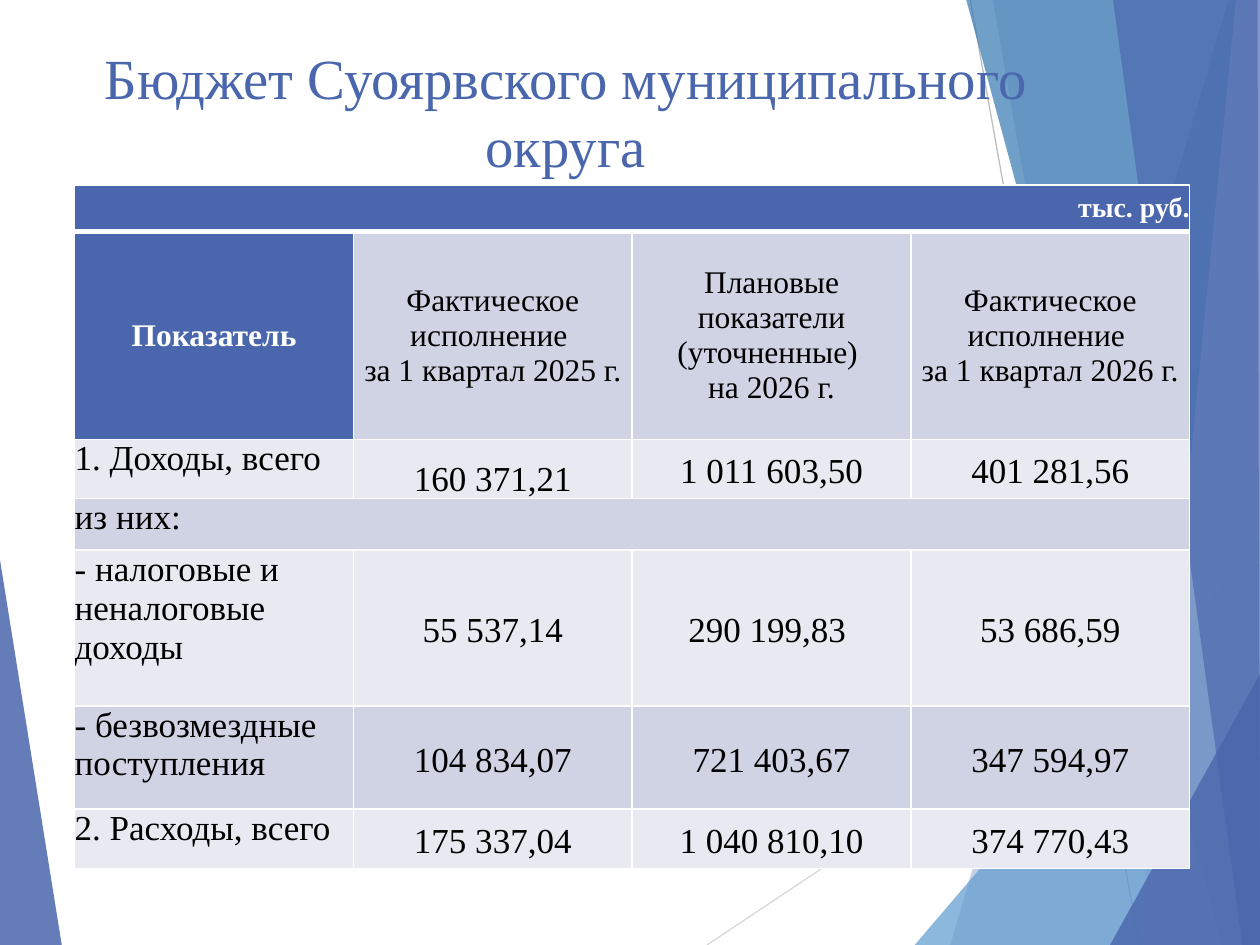
"""Build the budget slide of the Suoyarvi municipal district."""
from dataclasses import dataclass

from lxml import etree
from pptx import Presentation
from pptx.dml.color import RGBColor
from pptx.enum.shapes import MSO_CONNECTOR
from pptx.enum.text import MSO_ANCHOR, MSO_AUTO_SIZE, PP_ALIGN
from pptx.oxml.ns import qn
from pptx.util import Pt

LEFT, CENTER, RIGHT = PP_ALIGN.LEFT, PP_ALIGN.CENTER, PP_ALIGN.RIGHT
TOP, MIDDLE, BOTTOM = MSO_ANCHOR.TOP, MSO_ANCHOR.MIDDLE, MSO_ANCHOR.BOTTOM
STRAIGHT = MSO_CONNECTOR.STRAIGHT
FIXED_SIZE = MSO_AUTO_SIZE.NONE


@dataclass(frozen=True)
class Theme:
    font: str = "Times New Roman"
    accent: str = "4A66AC"
    sky: str = "629DD1"
    ocean: str = "3477B2"
    lavender: str = "90A2CF"
    band_dark: str = "D0D3E3"
    band_light: str = "E9EAF1"
    white: str = "FFFFFF"
    black: str = "000000"
    ray_light: str = "D9D9D9"
    ray_dark: str = "BFBFBF"
    title_size: float = 32.4
    unit_size: float = 16
    heading_size: float = 18
    body_size: float = 20


theme = Theme()


def write(paragraph, text, size, color, align, bold=False):
    paragraph.alignment = align
    run = paragraph.add_run()
    run.text = text
    run.font.name = theme.font
    run.font.size = Pt(size)
    run.font.bold = bold
    run.font.color.rgb = RGBColor.from_string(color)


def style_cell(cell, fill, top_width, bottom_width):
    properties = cell._tc.get_or_add_tcPr()
    for side, width in (("L", 1), ("R", 1), ("T", top_width), ("B", bottom_width)):
        border = etree.SubElement(properties, qn(f"a:ln{side}"), w=str(Pt(width)))
        solid = etree.SubElement(border, qn("a:solidFill"))
        etree.SubElement(solid, qn("a:srgbClr"), val=theme.white)
    cell.fill.solid()
    cell.fill.fore_color.rgb = RGBColor.from_string(fill)
    cell.margin_left = cell.margin_right = cell.margin_top = cell.margin_bottom = 0


presentation = Presentation()
presentation.slide_width, presentation.slide_height = Pt(720), Pt(540)
slide = presentation.slides.add_slide(presentation.slide_layouts[5])
shapes = slide.shapes

rays = [
    ((404, 540), (720.5, 329), theme.ray_light),
    ((554.5, 0), (651, 540), theme.ray_dark),
]
facets = [
    ([(0, 320), (35.3, 540), (0, 540)], theme.accent, 85),
    ([(702, 0), (543, 540), (720, 540), (720, 0)], theme.accent, 30),
    ([(567.3, 0), (661.7, 540), (720, 540), (720, 0)], theme.accent, 20),
    ([(522.7, 540), (720, 309), (720, 540)], theme.sky, 72),
    ([(552.2, 0), (698.4, 540), (720, 540), (720, 0)], theme.ocean, 70),
    ([(706.3, 0), (653, 540), (720, 540), (720, 0)], theme.lavender, 70),
    ([(636, 0), (710, 540), (720, 540), (718.6, 0)], theme.accent, 65),
    ([(634.3, 540), (720, 385.2), (720, 540)], theme.accent, 80),
]

for index, (points, color, opacity) in enumerate(facets):
    if index == 1:
        for start, end, ray_color in rays:
            ray = shapes.add_connector(STRAIGHT, *map(Pt, start + end))
            ray.line.color.rgb = RGBColor.from_string(ray_color)
            ray.line.width = Pt(0.75)
            etree.SubElement(ray.element.spPr, qn("a:effectLst"))
    corners = [(Pt(x), Pt(y)) for x, y in points]
    builder = shapes.build_freeform(*corners[0])
    builder.add_line_segments(corners[1:], close=True)
    facet = builder.convert_to_shape()
    facet.shadow.inherit = False
    facet.line.fill.background()
    facet.fill.solid()
    facet.fill.fore_color.rgb = RGBColor.from_string(color)
    tint = facet.element.spPr.find(f"{qn('a:solidFill')}/{qn('a:srgbClr')}")
    etree.SubElement(tint, qn("a:alpha"), val=str(opacity * 1000))

title = shapes.title
shapes.element.append(title.element)
title.left, title.top, title.width, title.height = Pt(8.6), Pt(20.9), Pt(629.3), Pt(56.9)
title_frame = title.text_frame
title_frame.word_wrap = True
title_frame.auto_size = FIXED_SIZE
title_frame.vertical_anchor = TOP
title_frame.margin_top = Pt(3.6)
title_frame.paragraphs[0].line_spacing = 1.0
write(title_frame.paragraphs[0], "Бюджет Суоярвского муниципального округа",
      theme.title_size, theme.accent, CENTER)

unit = "тыс. руб."
headings = [
    ["Показатель"],
    ["Фактическое исполнение ", "за 1 квартал 2025 г."],
    ["Плановые показатели (уточненные) ", "на 2026 г."],
    ["Фактическое исполнение ", "за 1 квартал 2026 г."],
]
indicators = [
    ["1. Доходы, всего", "160 371,21", "1 011 603,50", "401 281,56"],
    ["из них:"],
    ["- налоговые и неналоговые доходы", "55 537,14", "290 199,83 ", "53 686,59"],
    ["- безвозмездные поступления", "104 834,07", "721 403,67", "347 594,97"],
    ["2. Расходы, всего", "175 337,04", "1 040 810,10", "374 770,43"],
]
row_heights = [26.6, 118.8, 33.8, 29.5, 89, 59, 34]

budget = shapes.add_table(len(row_heights), len(headings),
                          Pt(42.7), Pt(105.7), Pt(637.2), Pt(sum(row_heights))).table
budget.horz_banding = False
for column in budget.columns:
    column.width = Pt(159.3)
for row_index, height in enumerate(row_heights):
    budget.rows[row_index].height = Pt(height)
    band = theme.band_dark if row_index % 2 else theme.band_light
    for column_index in range(len(headings)):
        is_header = row_index == 0 or (row_index == 1 and column_index == 0)
        style_cell(budget.cell(row_index, column_index),
                   theme.accent if is_header else band,
                   3 if row_index == 1 else 1, 3 if row_index == 0 else 1)
for row_index in (0, 3):
    budget.cell(row_index, 0).merge(budget.cell(row_index, 3))

unit_cell = budget.cell(0, 0)
unit_cell.vertical_anchor = MIDDLE
write(unit_cell.text_frame.paragraphs[0], unit, theme.unit_size, theme.white, RIGHT, True)

for column_index, lines in enumerate(headings):
    cell = budget.cell(1, column_index)
    cell.vertical_anchor = MIDDLE
    is_label = column_index == 0
    for line_index, line in enumerate(lines):
        frame = cell.text_frame
        paragraph = frame.add_paragraph() if line_index else frame.paragraphs[0]
        write(paragraph, line, theme.heading_size,
              theme.white if is_label else theme.black, CENTER, is_label)

for row_index, values in enumerate(indicators, start=2):
    for column_index, value in enumerate(values):
        cell = budget.cell(row_index, column_index)
        paragraph = cell.text_frame.paragraphs[0]
        is_label = column_index == 0
        cell.vertical_anchor = TOP if is_label else MIDDLE
        if not is_label:
            paragraph.line_spacing = 1.15
        write(paragraph, value, theme.body_size, theme.black, LEFT if is_label else CENTER)
budget.cell(2, 1).vertical_anchor = BOTTOM

presentation.save("out.pptx")
